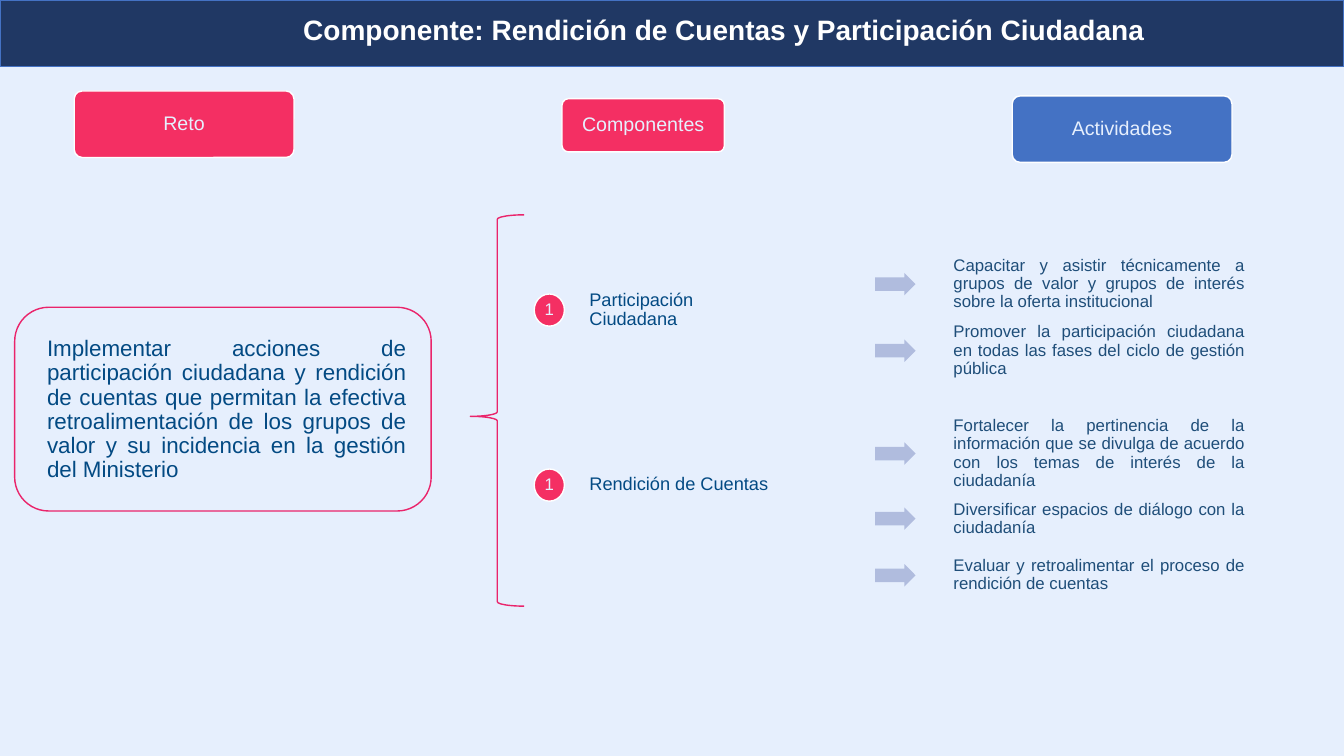
from pptx import Presentation
from pptx.dml.color import RGBColor
from pptx.enum.shapes import MSO_SHAPE
from pptx.enum.text import MSO_ANCHOR, PP_ALIGN
from pptx.util import Pt

RECT, ROUND = MSO_SHAPE.RECTANGLE, MSO_SHAPE.ROUNDED_RECTANGLE
OVAL, BRACE, ARROW = MSO_SHAPE.OVAL, MSO_SHAPE.LEFT_BRACE, MSO_SHAPE.RIGHT_ARROW
LEFT, CENTER, JUSTIFY = PP_ALIGN.LEFT, PP_ALIGN.CENTER, PP_ALIGN.JUSTIFY
MIDDLE = MSO_ANCHOR.MIDDLE

THEME = {
    "font": "Arial",
    "background": "E6EFFD", "navy": "203864", "blue": "4472C4",
    "pink": "F42F63", "outline": "EA246B", "white": "FFFFFF",
    "arrow": "B0BCDE", "body": "034A83", "activity": "1F4E79",
    "title_size": 20, "challenge_size": 16, "header_size": 14,
    "component_size": 13, "small_size": 12,
}

prs = Presentation()
prs.slide_width, prs.slide_height = Pt(960), Pt(540)
slide = prs.slides.add_slide(prs.slide_layouts[6])
slide.background.fill.solid()
slide.background.fill.fore_color.rgb = RGBColor.from_string(THEME["background"])


def add_figure(kind, box, fill=None, line=None):
    figure = slide.shapes.add_shape(kind, *map(Pt, box))
    figure.shadow.inherit = False
    for part, color in ((figure.fill, fill), (figure.line.fill, line)):
        if color:
            part.solid()
            part.fore_color.rgb = RGBColor.from_string(THEME[color])
        else:
            part.background()
    if line:
        figure.line.width = Pt(1)
    return figure


def write(holder, text, size, color, align, inset, bold=False):
    frame = holder.text_frame
    frame.word_wrap = True
    frame.vertical_anchor = MIDDLE
    frame.margin_left = frame.margin_right = Pt(inset)
    frame.margin_top = frame.margin_bottom = Pt(min(inset, 4))
    paragraph = frame.paragraphs[0]
    paragraph.alignment = align
    paragraph.line_spacing = 0.9
    run = paragraph.add_run()
    run.text = text
    run.font.name = THEME["font"]
    run.font.size = Pt(THEME[size])
    run.font.bold = bold
    run.font.color.rgb = RGBColor.from_string(THEME[color])


add_figure(RECT, (0, 0, 960, 47.5), "navy", "blue")
title = slide.shapes.add_textbox(Pt(209.5), Pt(9.4), Pt(618.5), Pt(26))
write(title, "Componente: Rendición de Cuentas y Participación Ciudadana",
      "title_size", "white", LEFT, 7.2, True)

headers = [
    ("Reto", (53, 65, 157, 47.5), "pink"),
    ("Componentes", (401.5, 70.5, 116, 38), "pink"),
    ("Actividades", (723, 68.5, 157, 47.5), "blue"),
]
for label, box, fill in headers:
    header = add_figure(ROUND, box, fill, "white")
    header.adjustments[0] = 0.12
    write(header, label, "header_size", "background", CENTER, 4)

add_figure(ROUND, (10.5, 219.5, 297.5, 145.5), line="outline")
challenge = slide.shapes.add_textbox(Pt(32.2), Pt(221.5), Pt(259.4), Pt(142.5))
write(challenge, "Implementar acciones de participación ciudadana y rendición de cuentas "
      "que permitan la efectiva retroalimentación de los grupos de valor y su "
      "incidencia en la gestión del Ministerio",
      "challenge_size", "body", JUSTIFY, 1.4)

brace = add_figure(BRACE, (336, 153.5, 38.5, 279.5), line="outline")
brace.adjustments[0], brace.adjustments[1] = 0.083, 0.515

components = [("Participación Ciudadana", 221.5), ("Rendición de Cuentas", 346.5)]
for name, middle in components:
    component = slide.shapes.add_textbox(Pt(419.6), Pt(middle - 21), Pt(140.4), Pt(42))
    write(component, name, "component_size", "body", JUSTIFY, 1.4)
    badge = add_figure(OVAL, (381.6, middle - 11.5, 21.6, 23), "pink", "white")
    write(badge, "1", "small_size", "background", CENTER, 4)

activities = [
    ("Capacitar y asistir técnicamente a grupos de valor y grupos de interés "
     "sobre la oferta institucional", 203),
    ("Promover la participación ciudadana en todas las fases del ciclo de "
     "gestión pública", 250.5),
    ("Fortalecer la pertinencia de la información que se divulga de acuerdo con "
     "los temas de interés de la ciudadanía", 324),
    ("Diversificar espacios de diálogo con la ciudadanía", 370.5),
    ("Evaluar y retroalimentar el proceso de rendición de cuentas", 411),
]
for description, middle in activities:
    arrow = add_figure(ARROW, (625, middle - 8, 29, 16), "arrow")
    arrow.adjustments[0], arrow.adjustments[1] = 0.6, 0.5
    activity = slide.shapes.add_textbox(Pt(679.7), Pt(middle - 24), Pt(211), Pt(48))
    write(activity, description, "small_size", "activity", JUSTIFY, 1.4)

prs.save("out.pptx")
